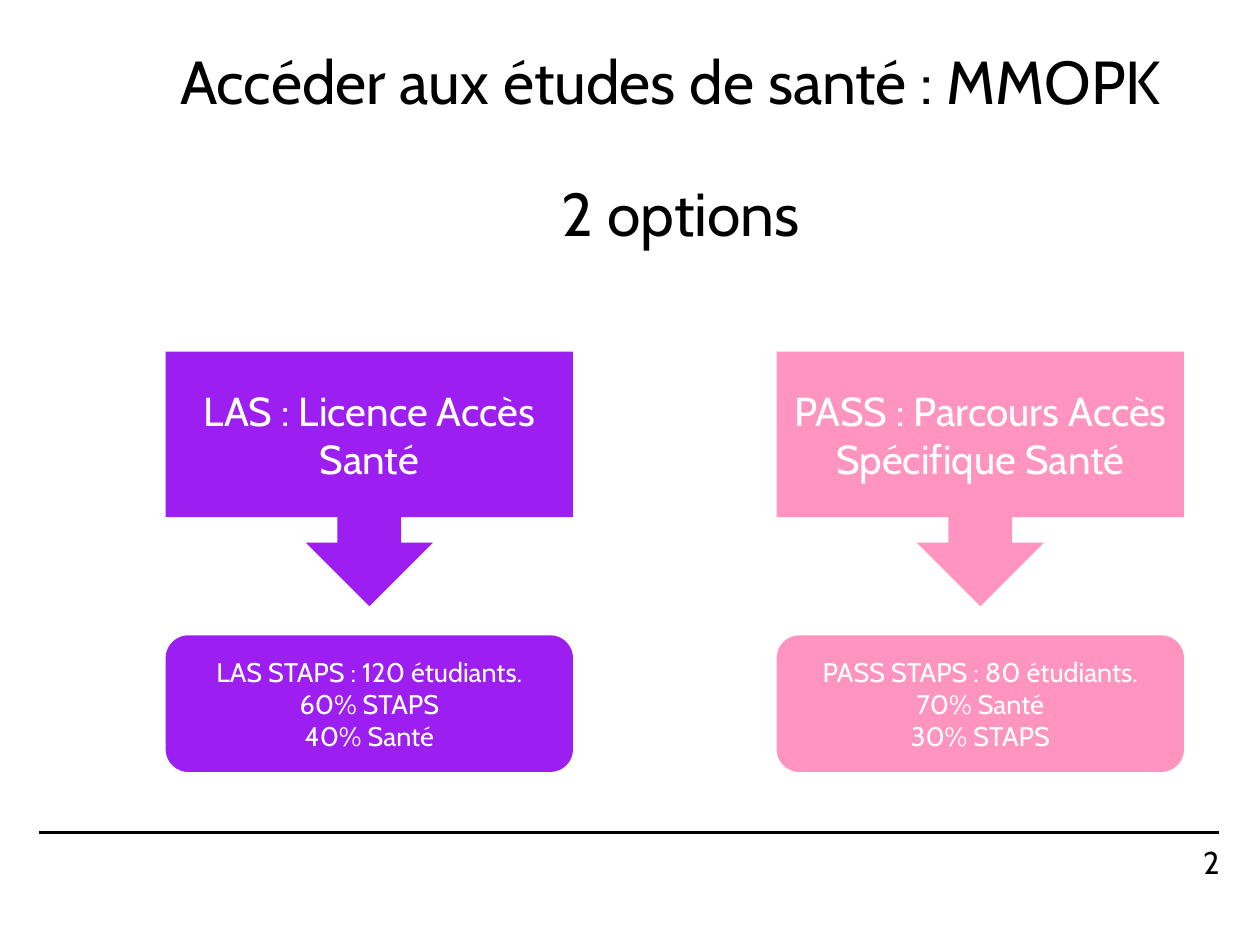
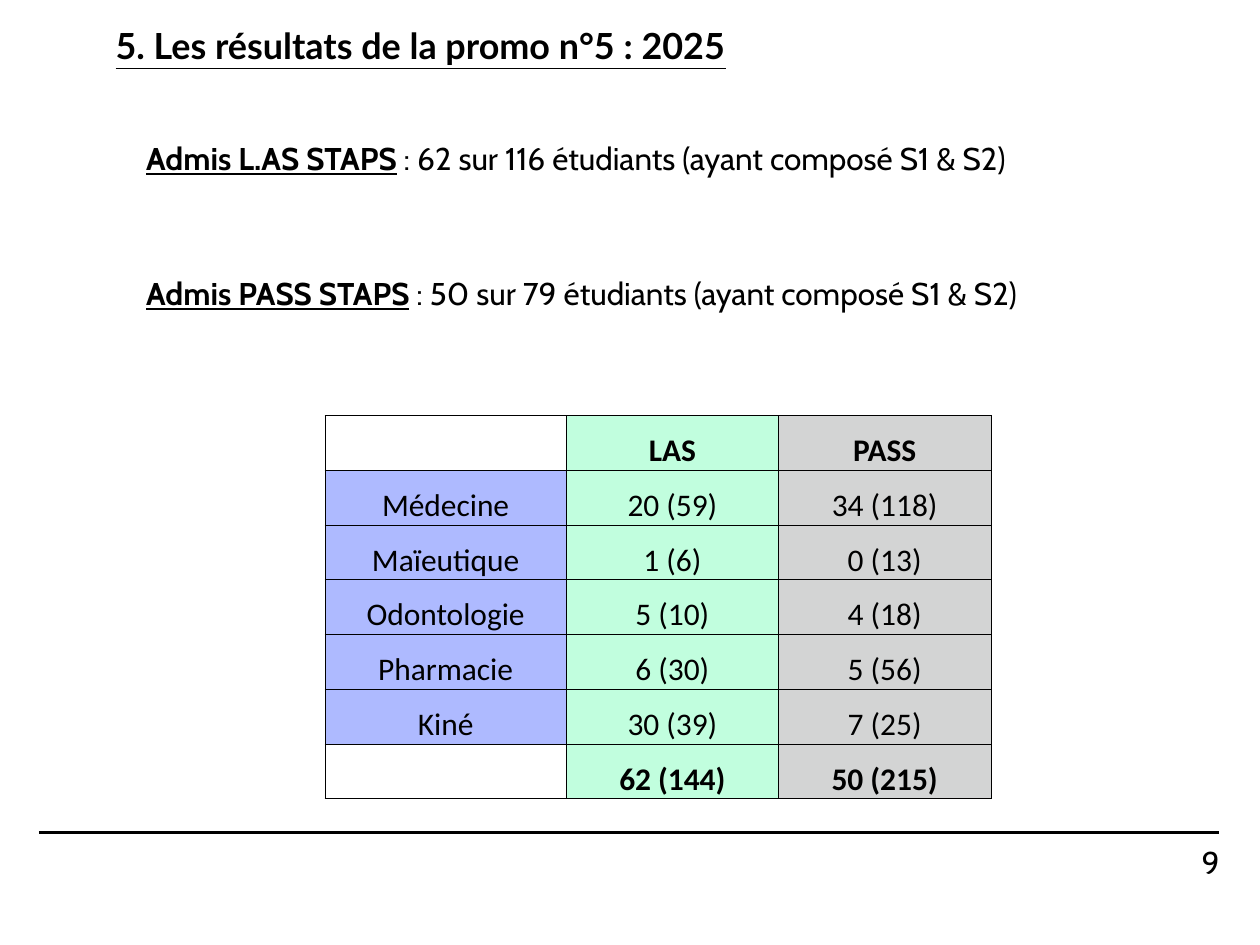
import pptx
import pptx.dml.color
import pptx.enum.shapes
import pptx.enum.text
import pptx.oxml
import pptx.oxml.ns
import pptx.util
import lxml.etree

RGB = pptx.dml.color.RGBColor
BLACK = RGB(0x00, 0x00, 0x00)
WHITE = RGB(0xFF, 0xFF, 0xFF)
PURPLE = RGB(0x9C, 0x1E, 0xF1)
PINK = RGB(0xFF, 0x94, 0xC1)
BLUE = RGB(0xAE, 0xBA, 0xFF)
GREEN = RGB(0xC1, 0xFE, 0xDE)
GREY = RGB(0xD3, 0xD4, 0xD4)

WIDE = pptx.util.Inches(15.59)
HIGH = pptx.util.Inches(11.69)
Pt = pptx.util.Pt
ALIGN = pptx.enum.text.PP_ALIGN
ANCHOR = pptx.enum.text.MSO_ANCHOR
SHAPE = pptx.enum.shapes.MSO_SHAPE
qn = pptx.oxml.ns.qn

BARE = {"margin_left": 0, "margin_right": 0, "margin_top": 0, "margin_bottom": 0}
STRONG = {"bold": True, "underline": True}
TIGHT = pptx.util.Inches(0.01)
CELL = {
    "vertical_anchor": ANCHOR.BOTTOM, "margin_left": TIGHT,
    "margin_right": TIGHT, "margin_top": TIGHT, "margin_bottom": 0,
}


def area(left, top, width, height):
    """Turn percentages of the slide's size into a box."""
    return (int(WIDE * left / 100), int(HIGH * top / 100),
            int(WIDE * width / 100), int(HIGH * height / 100))


def apply(thing, looks):
    """Set each attribute named in a dict of format values."""
    for name, value in looks.items():
        setattr(thing, name, value)


def place(shape, box):
    """Move and size a shape to fill a box."""
    apply(shape, dict(zip(("left", "top", "width", "height"), box)))


def write(frame, lines, size, color=BLACK, face="Cabin", **looks):
    """Fill a frame with paragraphs, each a list of (text, font look) runs."""
    for row, runs in enumerate(lines):
        para = frame.add_paragraph() if row else frame.paragraphs[0]
        apply(para, looks)
        for text, look in runs:
            run = para.add_run()
            run.text = text
            apply(run.font, {"size": Pt(size), "name": face, **look})
            run.font.color.rgb = color


def label(slide, box, runs, size, looks=None, **para):
    """Add a one-line text box."""
    frame = slide.shapes.add_textbox(*box).text_frame
    apply(frame, {"word_wrap": True, **(looks or {})})
    write(frame, [runs], size, **para)


def start(deck, number):
    """Add a title-only slide with its footer rule and page number."""
    slide = deck.slides.add_slide(deck.slide_layouts[5])
    left, top, width, _ = area(3.08, 88.11, 93.65, 0)
    kind = pptx.enum.shapes.MSO_CONNECTOR.STRAIGHT
    rule = slide.shapes.add_connector(kind, left, top, left + width, top)
    rule.line.color.rgb = BLACK
    rule.line.width = Pt(2)
    lxml.etree.SubElement(rule._element.spPr, qn("a:effectLst"))
    label(slide, area(82.1, 89.22, 14.69, 4.02), [(str(number), {})], 28,
          {**BARE, "vertical_anchor": ANCHOR.MIDDLE}, alignment=ALIGN.RIGHT)
    return slide


def head(slide, box, lines, size, looks, **para):
    """Place and fill the title."""
    title = slide.shapes.title
    place(title, box)
    frame = title.text_frame
    apply(frame, {"word_wrap": True, "vertical_anchor": ANCHOR.TOP,
                  "auto_size": pptx.enum.text.MSO_AUTO_SIZE.NONE, **looks})
    write(frame, lines, size, alignment=ALIGN.LEFT, line_spacing=0.9, **para)
    return frame


def block(slide, kind, box, lines, size, fill):
    """Add a filled shape with centred white text."""
    shape = slide.shapes.add_shape(kind, *box)
    shape.shadow.inherit = False
    shape.fill.solid()
    shape.fill.fore_color.rgb = fill
    shape.line.fill.background()
    frame = shape.text_frame
    apply(frame, {"word_wrap": True, "vertical_anchor": ANCHOR.MIDDLE})
    write(frame, [[(line, {})] for line in lines], size, WHITE,
          alignment=ALIGN.CENTER)


def option(slide, box, name, facts, fill):
    """Stack an arrow callout over a rounded box of facts."""
    left, top, width, height = box
    unit = height / 52
    block(slide, SHAPE.DOWN_ARROW_CALLOUT,
          (left, top, width, int(unit * 31.5)), [name], 36, fill)
    block(slide, SHAPE.ROUNDED_RECTANGLE,
          (left, int(top + unit * 35.1), width, int(unit * 16.9)),
          facts, 24, fill)


def border(cell):
    """Draw a thin black line on each side of a cell."""
    props = cell._tc.get_or_add_tcPr()
    for side in ("a:lnL", "a:lnR", "a:lnT", "a:lnB"):
        line = lxml.etree.SubElement(props, qn(side), w=str(Pt(0.5)))
        solid = lxml.etree.SubElement(line, qn("a:solidFill"))
        lxml.etree.SubElement(solid, qn("a:srgbClr"), val=str(BLACK))


def grid(slide, box, rows, shares, fills):
    """Add a bordered table with one fill for each column."""
    table = slide.shapes.add_table(len(rows), len(shares), *box).table
    apply(table, {"first_row": False, "horz_banding": False})
    for column, share in zip(table.columns, shares):
        column.width = int(box[2] * share / sum(shares))
    for down, row in enumerate(rows):
        table.rows[down].height = box[3] // len(rows)
        for across, text in enumerate(row):
            cell = table.cell(down, across)
            border(cell)
            if not text:
                cell.fill.background()
                continue
            cell.fill.solid()
            cell.fill.fore_color.rgb = fills[across]
            apply(cell, CELL)
            bold = down in (0, len(rows) - 1)
            write(cell.text_frame, [[(text, {"bold": bold})]], 28,
                  face="Calibri", alignment=ALIGN.CENTER)


def choices(deck):
    """Build the slide of the two options."""
    slide = start(deck, 2)
    frame = head(slide, area(14.3, 5.56, 79.47, 20.96),
                 [[("Accéder aux études de santé : MMOPK", {})],
                  [("2 options", {})]], 54, BARE)
    apply(frame.paragraphs[1],
          {"alignment": ALIGN.CENTER, "space_before": Pt(59)})
    options = [
        ("LAS : Licence Accès Santé",
         ["LAS STAPS : 120 étudiants.", "60% STAPS", "40% Santé"], PURPLE),
        ("PASS : Parcours Accès Spécifique Santé",
         ["PASS STAPS : 80 étudiants.", "70% Santé", "30% STAPS"], PINK),
    ]
    for index, parts in enumerate(options):
        option(slide, area(13.15 + index * 48.49, 37.21, 32.33, 44.48), *parts)


def results(deck):
    """Build the slide of the results."""
    slide = start(deck, 9)
    head(slide, area(8.53, 2.57, 71.07, 7.36),
         [[("5. Les résultats de la promo n°5 : 2025", STRONG)]], 32, {},
         face="Lato")
    counts = [
        ("Admis L.AS STAPS", " : 62 sur 116 étudiants (ayant composé S1 & S2)"),
        ("Admis PASS STAPS", " : 50 sur 79 étudiants (ayant composé S1 & S2)"),
    ]
    for index, (name, rest) in enumerate(counts, 1):
        label(slide, area(10.97, 14.29 * index, 87.88, 4.88),
              [(name, STRONG), (rest, {})], 28)
    rows = [
        ("", "LAS", "PASS"),
        ("Médecine", "20 (59)", "34 (118)"),
        ("Maïeutique", "1 (6)", "0 (13)"),
        ("Odontologie", "5 (10)", "4 (18)"),
        ("Pharmacie", "6 (30)", "5 (56)"),
        ("Kiné", "30 (39)", "7 (25)"),
        ("", "62 (144)", "50 (215)"),
    ]
    grid(slide, area(25.79, 43.97, 52.85, 40.55), rows,
         (2.99, 2.63, 2.63), (BLUE, GREEN, GREY))


def main():
    """Build and save the deck."""
    deck = pptx.Presentation()
    apply(deck, {"slide_width": WIDE, "slide_height": HIGH})
    choices(deck)
    results(deck)
    deck.save("out.pptx")


if __name__ == "__main__":
    main()
